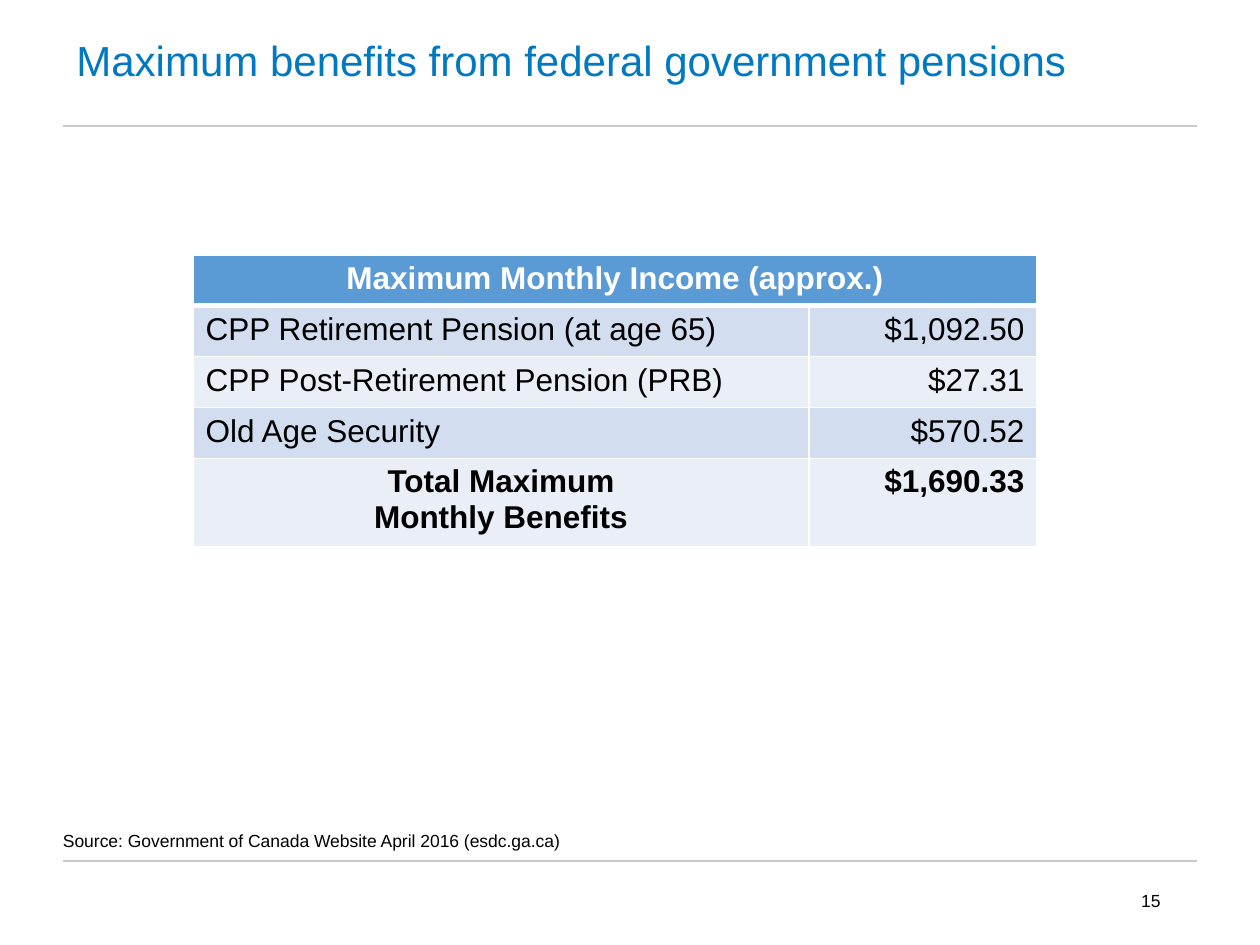
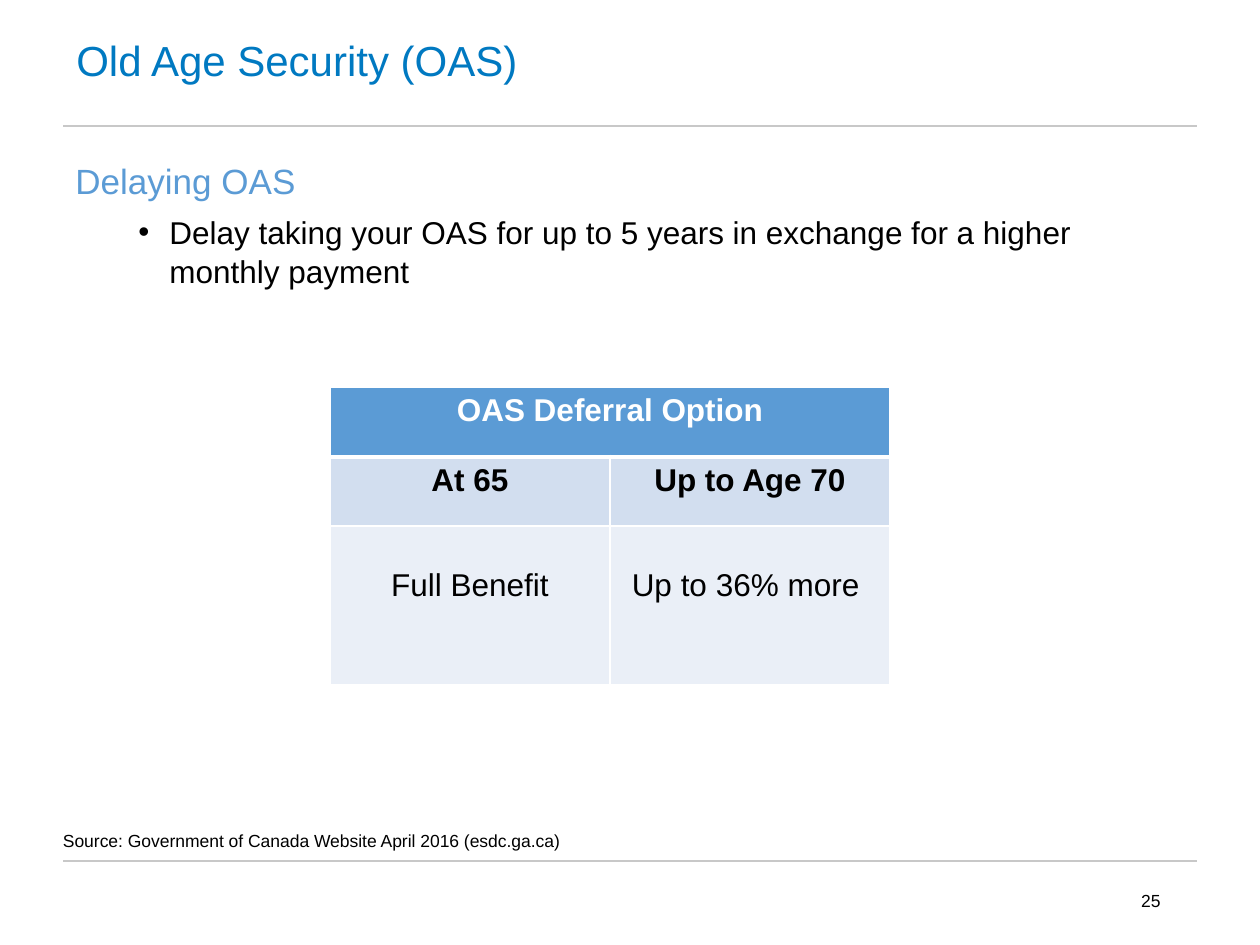
from lxml.etree import SubElement
from pptx import Presentation
from pptx.dml.color import RGBColor
from pptx.enum.shapes import MSO_CONNECTOR as CONNECTOR
from pptx.enum.text import MSO_ANCHOR as ANCHOR, PP_ALIGN as ALIGN
from pptx.oxml.ns import qn
from pptx.util import Pt

TITLE_BLUE, HEADER_BLUE = "0079C1", "5B9BD5"
BAND_COLOURS = ["D2DEEF", "EAEFF7"]
RULE_GREY, BLACK, WHITE = "C8C8C8", "000000", "FFFFFF"
SOURCE = "Source: Government of Canada Website April 2016 (esdc.ga.ca)"
LEFT, CENTER, RIGHT = ALIGN.LEFT, ALIGN.CENTER, ALIGN.RIGHT


def px(length):
    """Turn px (126 to the inch) into EMU."""
    return round(length * 914400 / 126)


def write(frame, text, size=18, colour=BLACK, bold=False, align=LEFT,
          spacing=1.0, before=0, bullet=None):
    """Add a paragraph to the frame, filling the empty first one if there is one."""
    paragraph = frame.paragraphs[0]
    if paragraph.runs:
        paragraph = frame.add_paragraph()
    paragraph.alignment = align
    paragraph.line_spacing = spacing
    paragraph.space_before = Pt(before)
    if bullet:
        properties = paragraph._p.get_or_add_pPr()
        properties.set("marL", str(px(94)))
        properties.set("indent", str(px(-31)))
        SubElement(properties, qn("a:buFont"), typeface="Arial")
        SubElement(properties, qn("a:buChar"), char=bullet)
    run = paragraph.add_run()
    run.text = text
    run.font.name = "Arial"
    run.font.size = Pt(size)
    run.font.bold = bold
    run.font.color.rgb = RGBColor.from_string(colour)


# Each body row is a list of cells: lines, alignment, bold
pages = [
    dict(
        title="Maximum benefits from federal government pensions", number="15",
        body=[],
        header="Maximum Monthly Income (approx.)",
        left=193, top=255, columns=[616, 228], heights=[50, 51, 51, 51, 82],
        rows=[
            [(["CPP Retirement Pension (at age 65)"], LEFT, False), (["$1,092.50"], RIGHT, False)],
            [(["CPP Post-Retirement Pension (PRB)"], LEFT, False), (["$27.31"], RIGHT, False)],
            [(["Old Age Security"], LEFT, False), (["$570.52"], RIGHT, False)],
            [(["Total Maximum", "Monthly Benefits"], CENTER, True), (["$1,690.33"], RIGHT, True)],
        ],
        last_margin=6),
    dict(
        title="Old Age Security (OAS)", number="25",
        body=[
            ("Delaying OAS", dict(size=20, colour=HEADER_BLUE, spacing=0.9)),
            ("Delay taking your OAS for up to 5 years in exchange for a higher monthly payment",
             dict(spacing=1.05, before=5, bullet="•")),
        ],
        header="OAS Deferral Option",
        left=330, top=387, columns=[280, 280], heights=[70, 69, 159],
        rows=[
            [(["At 65"], CENTER, True), (["Up to Age 70"], CENTER, True)],
            [(["Full Benefit"], CENTER, False), (["Up to 36% more "], CENTER, False)],
        ],
        last_margin=42),
]

presentation = Presentation()
presentation.slide_width, presentation.slide_height = px(1260), px(945)

for page in pages:
    slide = presentation.slides.add_slide(presentation.slide_layouts[6])

    # Rules under the title and above the footer
    for y in (861, 126):
        rule = slide.shapes.add_connector(CONNECTOR.STRAIGHT, px(63), px(y), px(1197), px(y))
        rule.line.color.rgb = RGBColor.from_string(RULE_GREY)
        rule.line.width = Pt(0.75)
        SubElement(rule._element.spPr, qn("a:effectLst"))

    # Title, slide number, source and body text
    boxes = [
        ((64, 0, 1134, 126), ANCHOR.MIDDLE, True,
         [(page["title"], dict(size=24, colour=TITLE_BLUE, spacing=0.9))]),
        ((890, 876, 283, 50), ANCHOR.MIDDLE, True,
         [(page["number"], dict(size=10, align=RIGHT))]),
        ((63, 804, 1133, 47), ANCHOR.BOTTOM, False, [(SOURCE, dict(size=10))]),
    ]
    if page["body"]:
        boxes.append(((63, 158, 1134, 209), ANCHOR.TOP, True, page["body"]))
    for place, anchor, inset, paragraphs in boxes:
        frame = slide.shapes.add_textbox(*map(px, place)).text_frame
        frame.word_wrap = True
        frame.vertical_anchor = anchor
        if not inset:
            frame.margin_left = frame.margin_right = 0
            frame.margin_top = frame.margin_bottom = 0
        for text, style in paragraphs:
            write(frame, text, **style)

    # Table with a merged header row and banded body rows
    columns, heights = page["columns"], page["heights"]
    table = slide.shapes.add_table(
        len(heights), len(columns), px(page["left"]), px(page["top"]),
        px(sum(columns)), px(sum(heights))).table
    table.first_row = table.horz_banding = False
    for column, width in zip(table.columns, columns):
        column.width = px(width)
    for row, height in zip(table.rows, heights):
        row.height = px(height)
    table.cell(0, 0).merge(table.cell(0, len(columns) - 1))
    write(table.cell(0, 0).text_frame, page["header"], colour=WHITE, bold=True, align=CENTER)

    for row_index, row in enumerate(table.rows):
        for column_index, cell in enumerate(row.cells):
            # White borders, thicker between the header and the body
            properties = cell._tc.get_or_add_tcPr()
            for side in "LRTB":
                thick = (row_index, side) in ((0, "B"), (1, "T"))
                border = SubElement(properties, qn("a:ln" + side), w=str(Pt(3 if thick else 1)))
                fill = SubElement(border, qn("a:solidFill"))
                SubElement(fill, qn("a:srgbClr"), val=WHITE)
            colour = BAND_COLOURS[(row_index - 1) % 2] if row_index else HEADER_BLUE
            cell.fill.solid()
            cell.fill.fore_color.rgb = RGBColor.from_string(colour)
            if row_index:
                lines, align, bold = page["rows"][row_index - 1][column_index]
                for line in lines:
                    write(cell.text_frame, line, bold=bold, align=align)
            if row_index == len(heights) - 1:
                cell.margin_top = px(page["last_margin"])

presentation.save("out.pptx")
